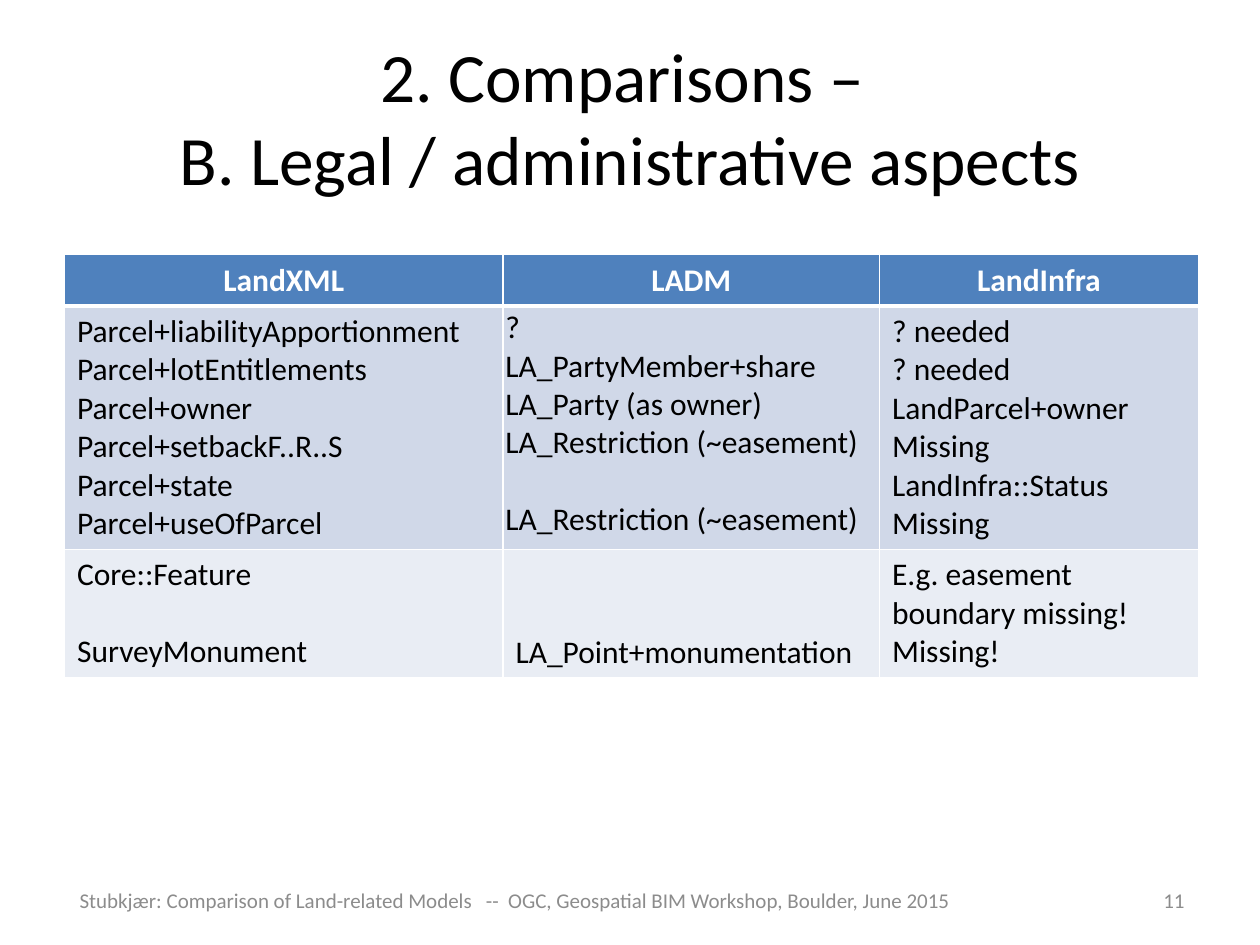
from lxml.etree import SubElement
from pptx import Presentation
from pptx.dml.color import RGBColor
from pptx.enum.text import MSO_ANCHOR, PP_ALIGN
from pptx.oxml.ns import qn
from pptx.util import Cm, Pt

BLACK = RGBColor(0x00, 0x00, 0x00)
WHITE = RGBColor(0xFF, 0xFF, 0xFF)
GREY = RGBColor(0x8C, 0x8C, 0x8C)
HEADER_BLUE = RGBColor(0x4F, 0x81, 0xBD)
ROW_FILLS = [RGBColor(0xD0, 0xD8, 0xE8), RGBColor(0xE9, 0xED, 0xF4)]

HEADINGS = ["LandXML", "LADM", "LandInfra"]
# Each cell is a list of groups, set apart by one line; "\v" breaks a line.
ROWS = [
    [
        ["Parcel+liabilityApportionment\vParcel+lotEntitlements\vParcel+owner\v"
         "Parcel+setbackF..R..S\vParcel+state\vParcel+useOfParcel"],
        ["?\vLA_PartyMember+share\vLA_Party (as owner)\vLA_Restriction (~easement)",
         "LA_Restriction (~easement)"],
        ["? needed\v? needed\vLandParcel+owner\vMissing\vLandInfra::Status\vMissing"],
    ],
    [
        ["Core::Feature", "SurveyMonument"],
        ["LA_Point+monumentation"],
        ["E.g. easement boundary missing!\vMissing!"],
    ],
]


class SlideBuilder:
    font = "Calibri"
    table_size = 18
    group_gap = Pt(22)

    def __init__(self, page):
        self.page = page

    def style(self, frame, size, color, align, bold=False):
        for para in frame.paragraphs:
            para.alignment = align
            for span in para.runs:
                span.font.name = self.font
                span.font.size = Pt(size)
                span.font.bold = bold
                span.font.color.rgb = color

    def title(self, text, left, top, width, height):
        box = self.page.shapes.title
        box.left, box.top, box.width, box.height = map(Cm, (left, top, width, height))
        box.text_frame.text = text
        box.text_frame.vertical_anchor = MSO_ANCHOR.MIDDLE
        self.style(box.text_frame, 39.6, BLACK, PP_ALIGN.CENTER)

    def footer(self, text, left, width, align):
        box = self.page.shapes.add_textbox(Cm(left), Cm(17.65), Cm(width), Cm(1.01))
        frame = box.text_frame
        frame.word_wrap = True
        frame.vertical_anchor = MSO_ANCHOR.MIDDLE
        frame.text = text
        self.style(frame, 12, GREY, align)

    def borders(self, cell, bottom):
        properties = cell._tc.get_or_add_tcPr()
        for side in ("L", "R", "T", "B"):
            points = bottom if side == "B" else 1
            line = SubElement(properties, qn(f"a:ln{side}"), w=str(Pt(points)))
            fill = SubElement(line, qn("a:solidFill"))
            SubElement(fill, qn("a:srgbClr"), val=str(WHITE))

    def cell(self, cell, groups, fill, color=BLACK, align=PP_ALIGN.LEFT, header=False):
        self.borders(cell, 3 if header else 1)
        cell.fill.solid()
        cell.fill.fore_color.rgb = fill
        frame = cell.text_frame
        for index, group in enumerate(groups):
            para = frame.add_paragraph() if index else frame.paragraphs[0]
            para.text = group
            if index:
                para.space_before = self.group_gap
        self.style(frame, self.table_size, color, align, header)

    def table(self, left, top, widths, heights):
        grid = self.page.shapes.add_table(
            len(heights), len(widths), Cm(left), Cm(top), Cm(sum(widths)), Cm(sum(heights))
        ).table
        for column, width in zip(grid.columns, widths):
            column.width = Cm(width)
        for row, height in zip(grid.rows, heights):
            row.height = Cm(height)
        # Header row
        for column, heading in enumerate(HEADINGS):
            head = grid.cell(0, column)
            self.cell(head, [heading], HEADER_BLUE, WHITE, PP_ALIGN.CENTER, True)
            head.vertical_anchor = MSO_ANCHOR.MIDDLE
        # Body rows
        for row, (entries, fill) in enumerate(zip(ROWS, ROW_FILLS), 1):
            for column, groups in enumerate(entries):
                self.cell(grid.cell(row, column), groups, fill)
        return grid


def main():
    deck = Presentation()
    deck.slide_width, deck.slide_height = Cm(25.4), Cm(19.05)
    builder = SlideBuilder(deck.slides.add_slide(deck.slide_layouts[5]))

    # Title
    builder.title("2. Comparisons – \nB. Legal / administrative aspects", 1.27, 0.76, 22.86, 3.18)

    # Comparison table
    grid = builder.table(1.3, 5.13, [8.84, 7.59, 6.43], [1.04, 4.88, 2.59])
    rights = grid.cell(1, 1)
    rights.margin_left = rights.margin_right = Cm(0.05)
    rights.margin_top = rights.margin_bottom = Cm(0.05)
    grid.cell(2, 1).vertical_anchor = MSO_ANCHOR.BOTTOM

    # Footer and page number
    builder.footer(
        "Stubkjær: Comparison of Land-related Models   --  OGC, Geospatial BIM Workshop, "
        "Boulder, June 2015", 1.09, 18.59, PP_ALIGN.CENTER)
    builder.footer("11", 18.21, 5.92, PP_ALIGN.RIGHT)

    deck.save("out.pptx")


if __name__ == "__main__":
    main()
